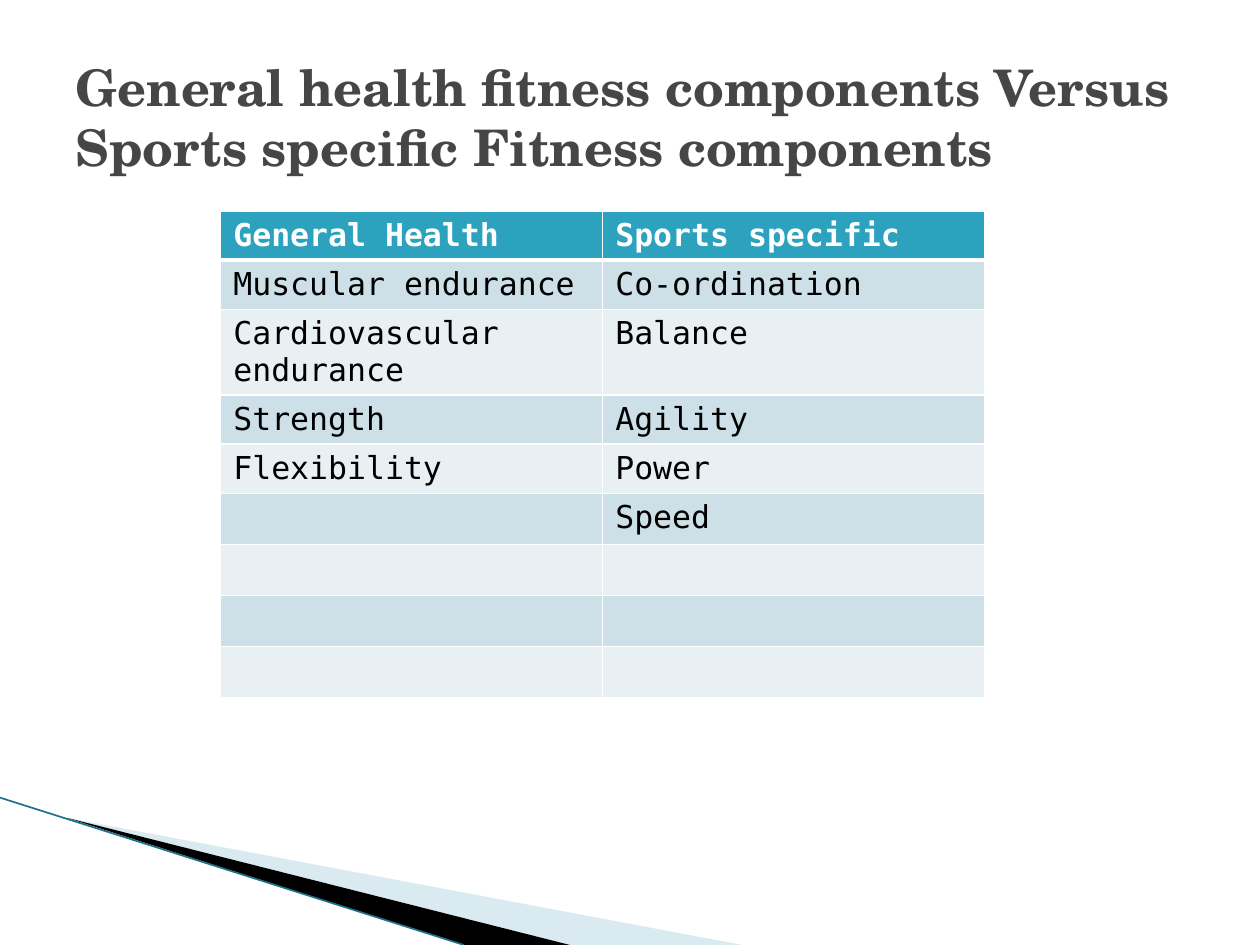
import dataclasses

import pptx
import pptx.dml.color
import pptx.enum.shapes
import pptx.enum.text
import pptx.oxml
import pptx.oxml.ns
import pptx.util

Cm = pptx.util.Cm
Pt = pptx.util.Pt


@dataclasses.dataclass(frozen=True)
class Theme:
    """Colours, fonts and sizes of the slide."""
    title_font: str = "TeX Gyre Schola"
    body_font: str = "DejaVu Sans Mono"
    title_size: float = 28.8
    body_size: float = 18
    title: str = "464646"
    header: str = "2DA2BF"
    bands: tuple = ("CDE0E8", "E8F0F4")
    white: str = "FFFFFF"
    black: str = "000000"
    pale_wedge: str = "A0CBDC"
    edge: str = "1C7387"


THEME = Theme()
TITLE = "General health fitness components Versus Sports specific Fitness components"
ROWS = [
    ("General Health", "Sports specific"),
    ("Muscular endurance", "Co-ordination"),
    ("Cardiovascular endurance", "Balance"),
    ("Strength", "Agility"),
    ("Flexibility", "Power"),
    ("", "Speed"),
    ("", ""),
    ("", ""),
    ("", ""),
]


def colour(value):
    """Return an RGB colour from its hex value."""
    return pptx.dml.color.RGBColor.from_string(value)


def format_runs(text_frame, font_name, size, value, bold):
    """Apply one font to every run of a text frame."""
    for paragraph in text_frame.paragraphs:
        for run in paragraph.runs:
            run.font.name = font_name
            run.font.size = Pt(size)
            run.font.bold = bold
            run.font.color.rgb = colour(value)


def add_wedge(slide, points, value, opacity=100):
    """Draw a filled polygon through points given in centimetres."""
    corners = [(Cm(x), Cm(y)) for x, y in points]
    builder = slide.shapes.build_freeform(*corners[0], scale=1.0)
    builder.add_line_segments(corners[1:], close=True)
    shape = builder.convert_to_shape()
    shape.shadow.inherit = False
    shape.fill.solid()
    shape.fill.fore_color.rgb = colour(value)
    shape.line.fill.background()
    if opacity < 100:
        fill = shape.fill._xPr.find(pptx.oxml.ns.qn("a:solidFill"))
        alpha = pptx.oxml.parse_xml(
            f'<a:alpha {pptx.oxml.ns.nsdecls("a")} val="{opacity * 1000}"/>')
        fill[0].append(alpha)


def add_corner(slide, left, top, height):
    """Draw the wedges and the edge line in the lower left corner."""
    bottom = top + height
    tip = (left + 1.36, top + 0.41)
    add_wedge(slide, [tip, (left + 14.96, bottom), (left + 11.49, bottom)],
              THEME.pale_wedge, 40)
    add_wedge(slide, [tip, (left + 11.49, bottom), (left + 9.35, bottom)], THEME.black)
    edge = slide.shapes.add_connector(
        pptx.enum.shapes.MSO_CONNECTOR.STRAIGHT,
        Cm(left), Cm(top), Cm(left + 9.35), Cm(bottom))
    edge.line.color.rgb = colour(THEME.edge)
    edge.line.width = Pt(0.95)
    edge._element.spPr.append(
        pptx.oxml.parse_xml(f'<a:effectLst {pptx.oxml.ns.nsdecls("a")}/>'))


def place_title(slide, left, top, width, height):
    """Position and format the title placeholder."""
    title = slide.shapes.title
    title.left, title.top, title.width, title.height = map(Cm, (left, top, width, height))
    text_frame = title.text_frame
    text_frame.text = TITLE
    text_frame.word_wrap = True
    text_frame.auto_size = pptx.enum.text.MSO_AUTO_SIZE.NONE
    text_frame.vertical_anchor = pptx.enum.text.MSO_ANCHOR.MIDDLE
    text_frame.paragraphs[0].alignment = pptx.enum.text.PP_ALIGN.LEFT
    format_runs(text_frame, THEME.title_font, THEME.title_size, THEME.title, True)


def add_borders(cell, top_width, bottom_width):
    """Give a cell white borders."""
    properties = cell._tc.get_or_add_tcPr()
    widths = {"lnL": 1, "lnR": 1, "lnT": top_width, "lnB": bottom_width}
    for side, width in widths.items():
        properties.append(pptx.oxml.parse_xml(
            f'<a:{side} {pptx.oxml.ns.nsdecls("a")} w="{Pt(width)}"><a:solidFill>'
            f'<a:srgbClr val="{THEME.white}"/></a:solidFill></a:{side}>'))


def add_comparison(slide, left, top, width, row_height, tall_height):
    """Add the two-column table of fitness components."""
    frame = slide.shapes.add_table(
        len(ROWS), 2, Cm(left), Cm(top), Cm(width), Cm(row_height * len(ROWS)))
    table = frame.table
    for row_index, texts in enumerate(ROWS):
        is_header = row_index == 0
        is_tall = any(len(text) > 20 for text in texts)
        table.rows[row_index].height = Cm(tall_height if is_tall else row_height)
        fill = THEME.header if is_header else THEME.bands[(row_index - 1) % 2]
        for column_index, text in enumerate(texts):
            cell = table.cell(row_index, column_index)
            add_borders(cell, 3 if row_index == 1 else 1, 3 if is_header else 1)
            cell.fill.solid()
            cell.fill.fore_color.rgb = colour(fill)
            if text:
                cell.text_frame.text = text
                format_runs(cell.text_frame, THEME.body_font, THEME.body_size,
                            THEME.white if is_header else THEME.black, is_header)


def main():
    """Build and save the presentation."""
    presentation = pptx.Presentation()
    presentation.slide_width = Cm(25.4)
    presentation.slide_height = Cm(19.05)
    slide = presentation.slides.add_slide(presentation.slide_layouts[5])
    add_corner(slide, 0, 16.08, 2.97)
    place_title(slide, 1.27, 0.76, 22.86, 3.18)
    add_comparison(slide, 4.45, 4.25, 15.4, 0.99, 1.71)
    presentation.save("out.pptx")


if __name__ == "__main__":
    main()
